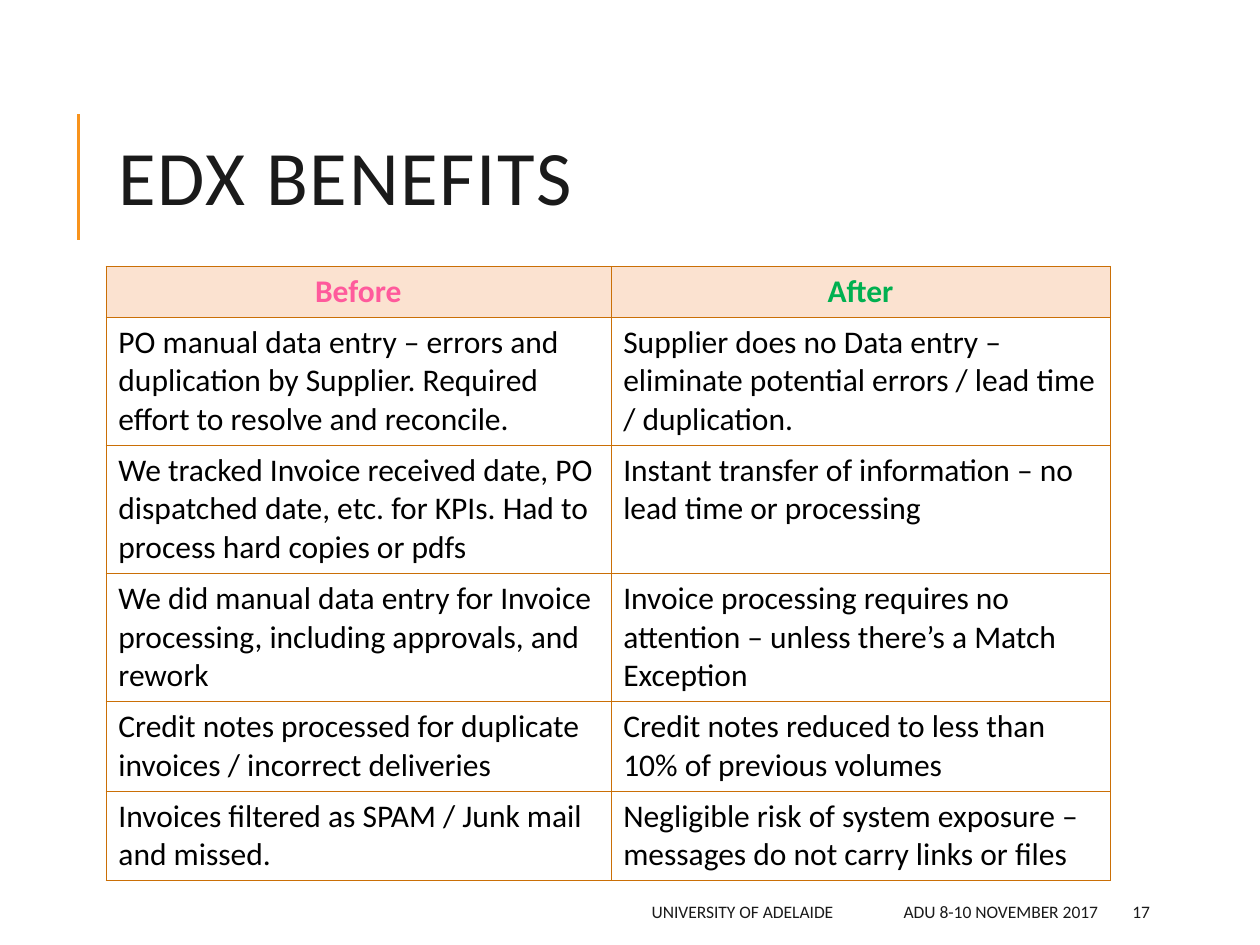
import dataclasses

import pptx
import pptx.dml.color
import pptx.enum.shapes
import pptx.enum.text
import pptx.oxml
import pptx.oxml.ns
import pptx.util

Pt = pptx.util.Pt
RGB = pptx.dml.color.RGBColor.from_string
ALIGN = pptx.enum.text.PP_ALIGN
MIDDLE = pptx.enum.text.MSO_ANCHOR.MIDDLE


@dataclasses.dataclass(frozen=True)
class Theme:
    font: str = "Calibri"
    ink: str = "1A1A1A"
    body: str = "000000"
    accent: str = "F8931D"
    border: str = "CA6F06"
    header_fill: str = "FBE2D0"
    cell_fill: str = "FFFFFF"
    before: str = "FF5A9C"
    after: str = "00B050"
    title_size: int = 44
    table_size: int = 18
    footer_size: int = 10
    border_width: float = 0.25


THEME = Theme()
COLUMN_WIDTHS = (288.5, 285.5)
LINE_HEIGHT = 22
ROWS = [  # lines of text, before, after
    (1, "Before", "After"),
    (3, "PO manual data entry – errors and duplication by Supplier. "
        "Required effort to resolve and reconcile.",
     "Supplier does no Data entry – eliminate potential errors / lead time / duplication."),
    (3, "We tracked Invoice received date, PO dispatched date, etc. for KPIs. "
        "Had to process hard copies or pdfs",
     "Instant transfer of information – no lead time or processing"),
    (3, "We did manual data entry for Invoice processing, including approvals, and rework",
     "Invoice processing requires no attention – unless there’s a Match Exception"),
    (2, "Credit notes processed for duplicate invoices / incorrect deliveries",
     "Credit notes reduced to less than 10% of previous volumes"),
    (2, "Invoices filtered as SPAM / Junk mail and missed.",
     "Negligible risk of system exposure –messages do not carry links or files"),
]


def write(tf, text, size, color, bold=False, align=ALIGN.LEFT):
    """Fill a text frame with one formatted run and return its paragraph and run."""
    p = tf.paragraphs[0]
    p.alignment = align
    r = p.add_run()
    r.text = text
    for name, value in {"name": THEME.font, "size": Pt(size), "bold": bold}.items():
        setattr(r.font, name, value)
    r.font.color.rgb = RGB(color)
    return p, r


def add_text(slide, box, text, size, **format_values):
    tf = slide.shapes.add_textbox(*map(Pt, box)).text_frame
    tf.word_wrap = True
    tf.vertical_anchor = MIDDLE
    return write(tf, text, size, THEME.ink, **format_values)


def add_title(slide, text):
    p, r = add_text(slide, (60.5, 46, 574, 118), text, THEME.title_size)
    p.line_spacing = 0.8
    r.font._element.set("spc", "100")


def add_accent_line(slide, x, top, bottom):
    line = slide.shapes.add_connector(
        pptx.enum.shapes.MSO_CONNECTOR.STRAIGHT, Pt(x), Pt(bottom), Pt(x), Pt(top))
    line.line.color.rgb = RGB(THEME.accent)
    line.line.width = Pt(1.5)
    pptx.oxml.ns.qn("a:effectLst")
    line._element.spPr.append(
        pptx.oxml.parse_xml(f"<a:effectLst {pptx.oxml.ns.nsdecls('a')}/>"))


def set_borders(cell):
    tc_pr = cell._tc.get_or_add_tcPr()
    for i, side in enumerate(("lnL", "lnR", "lnT", "lnB")):
        tc_pr.insert(i, pptx.oxml.parse_xml(
            f'<a:{side} {pptx.oxml.ns.nsdecls("a")} w="{Pt(THEME.border_width)}">'
            f'<a:solidFill><a:srgbClr val="{THEME.border}"/></a:solidFill></a:{side}>'))


def add_benefits_table(slide, left, top):
    heights = [LINE_HEIGHT * lines + 7.2 for lines, *_ in ROWS]
    table = slide.shapes.add_table(
        len(ROWS), len(COLUMN_WIDTHS), Pt(left), Pt(top),
        Pt(sum(COLUMN_WIDTHS)), Pt(sum(heights))).table
    table.first_row = table.horz_banding = False
    for column, width in zip(table.columns, COLUMN_WIDTHS):
        column.width = Pt(width)
    for i, (_, *texts) in enumerate(ROWS):
        table.rows[i].height = Pt(heights[i])
        header = i == 0
        for j, text in enumerate(texts):
            cell = table.cell(i, j)
            cell.fill.solid()
            cell.fill.fore_color.rgb = RGB(THEME.header_fill if header else THEME.cell_fill)
            set_borders(cell)
            color = (THEME.before, THEME.after)[j] if header else THEME.body
            write(cell.text_frame, text, THEME.table_size, color, bold=header,
                  align=ALIGN.CENTER if header else ALIGN.LEFT)


def main():
    prs = pptx.Presentation()
    prs.slide_width, prs.slide_height = Pt(720), Pt(540)
    slide = prs.slides.add_slide(prs.slide_layouts[6])
    add_accent_line(slide, 45, 65, 137)
    add_title(slide, "EDX BENEFITS")
    add_benefits_table(slide, 60.5, 152)
    add_text(slide, (286, 510, 348.5, 21.5),
             "UNIVERSITY OF ADELAIDE\t\tADU 8-10 NOVEMBER 2017",
             THEME.footer_size, align=ALIGN.RIGHT)
    add_text(slide, (640, 510, 57.5, 21.5), "17", THEME.footer_size)
    prs.save("out.pptx")


if __name__ == "__main__":
    main()
